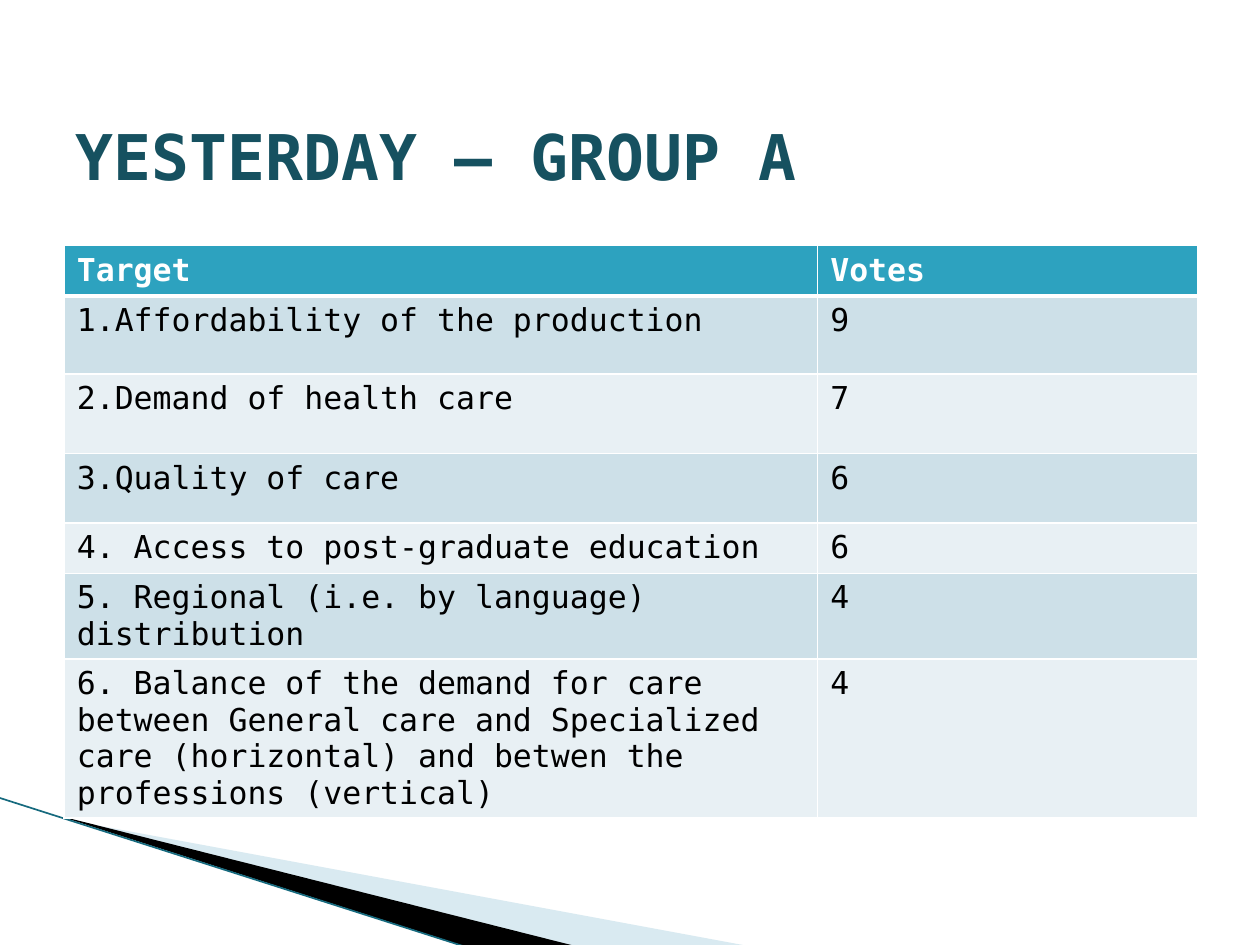
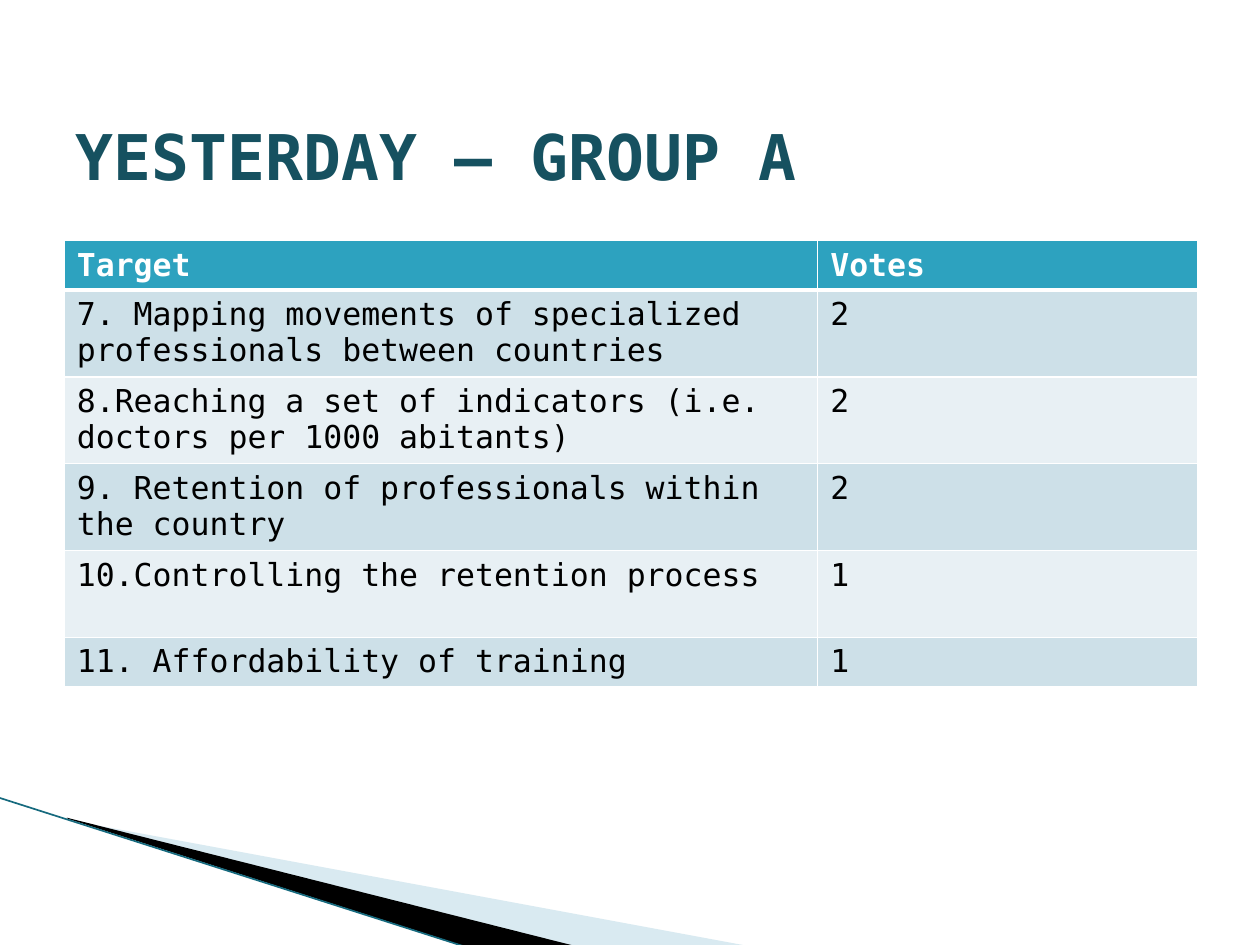
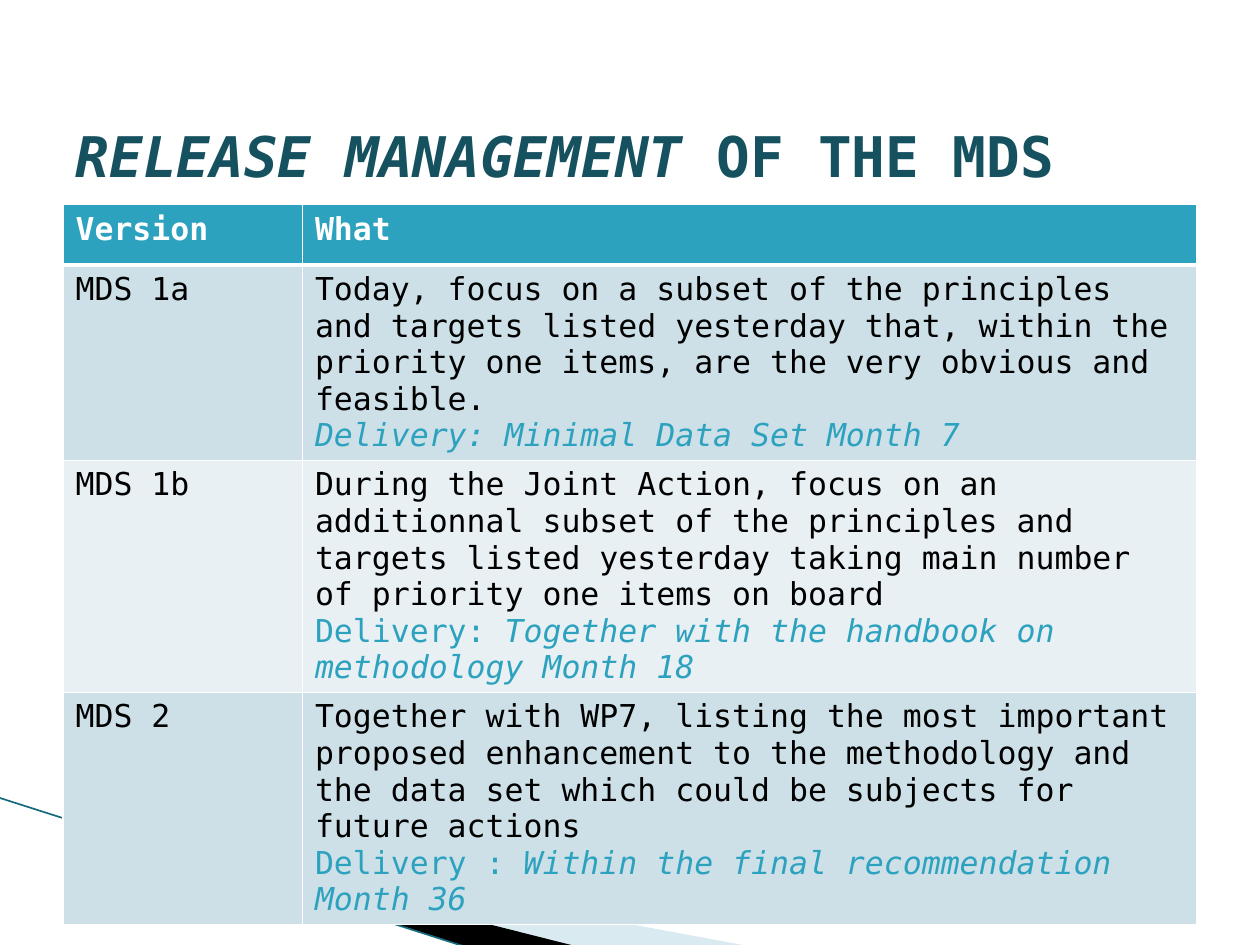
from lxml import etree
from pptx import Presentation
from pptx.dml.color import RGBColor
from pptx.enum.shapes import MSO_CONNECTOR
from pptx.enum.text import MSO_ANCHOR, MSO_AUTO_SIZE, PP_ALIGN
from pptx.oxml.ns import qn
from pptx.util import Pt

STRAIGHT = MSO_CONNECTOR.STRAIGHT
MIDDLE = MSO_ANCHOR.MIDDLE
TOP = MSO_ANCHOR.TOP
LEFT = PP_ALIGN.LEFT
NO_AUTOFIT = MSO_AUTO_SIZE.NONE

FONT = "DejaVu Sans Mono"
WHITE = RGBColor(0xFF, 0xFF, 0xFF)
BLACK = RGBColor(0x00, 0x00, 0x00)
TITLE_TEAL = RGBColor(0x16, 0x51, 0x60)
ACCENT = RGBColor(0x2D, 0xA2, 0xBF)
BAND_DARK = RGBColor(0xCD, 0xE0, 0xE8)
BAND_LIGHT = RGBColor(0xE8, 0xF0, 0xF4)
WEDGE_PALE = RGBColor(0xA0, 0xCB, 0xDC)
EDGE_TEAL = RGBColor(0x16, 0x6A, 0x7E)

DELIVERY = {"color": ACCENT}
DELIVERY_ITALIC = {"color": ACCENT, "italic": True}

VOTE_COLUMNS = [430.56, 217.44]
SLIDES = [
    {
        "title": [("YESTERDAY – GROUP A", {})],
        "title_size": 36,
        "position": (36.72, 140.4),
        "columns": VOTE_COLUMNS,
        "heights": [28.8, 44.64, 45.36, 39.6, 28.8, 28.8, 28.8],
        "header_anchor": MIDDLE,
        "rows": [
            ("Target", "Votes"),
            ("1.Affordability of the production", "9"),
            ("2.Demand of health care", "7"),
            ("3.Quality of care", "6"),
            ("4. Access to post-graduate education", "6"),
            ("5. Regional (i.e. by language) distribution", "4"),
            ("6. Balance of the demand for care between General care and "
             "Specialized care (horizontal) and betwen the professions (vertical)", "4"),
        ],
    },
    {
        "title": [("YESTERDAY – GROUP A", {})],
        "title_size": 36,
        "position": (36.72, 137.52),
        "columns": VOTE_COLUMNS,
        "heights": [28.08] + [49.68] * 4 + [28.08],
        "header_anchor": MIDDLE,
        "rows": [
            ("Target", "Votes"),
            ("7. Mapping movements of specialized professionals between countries", "2"),
            ("8.Reaching a set of indicators (i.e. doctors per 1000 abitants)", "2"),
            ("9. Retention of professionals within the country", "2"),
            ("10.Controlling the retention process", "1"),
            ("11. Affordability of training", "1"),
        ],
    },
    {
        "title": [("RELEASE MANAGEMENT", {"italic": True}), (" OF THE MDS", {})],
        "title_size": 32,
        "position": (36, 116.9),
        "columns": [136.8, 511.2],
        "heights": [34.56] + [83.52] * 3,
        "header_anchor": TOP,
        "rows": [
            ("Version", "What"),
            ("MDS 1a", [
                [("Today, focus on a subset of the principles and targets listed "
                  "yesterday that, within the priority one items, are the very "
                  "obvious and feasible.", {})],
                [("Delivery: Minimal Data Set Month 7", DELIVERY_ITALIC)],
            ]),
            ("MDS 1b", [
                [("During the Joint Action, focus on an additionnal subset of the "
                  "principles and targets listed yesterday taking main number of "
                  "priority one items on board", {})],
                [("Delivery: ", DELIVERY),
                 ("Together with the handbook on methodology Month 18", DELIVERY_ITALIC)],
            ]),
            ("MDS 2", [
                [("Together with WP7, listing the most important proposed "
                  "enhancement to the methodology and the data set which could be "
                  "subjects for future actions", {})],
                [("Delivery : ", DELIVERY),
                 ("Within the final recommendation Month 36", DELIVERY_ITALIC)],
            ]),
        ],
    },
]

WEDGES = [
    (WEDGE_PALE, 40, [(39.6, 468.7), (428.4, 540.7), (328.3, 540.7), (39.6, 468)]),
    (BLACK, 100, [(38.2, 467.3), (329, 540.7), (267.8, 541.4), (38.9, 468)]),
]


def write_text(text_frame, text, **text_format):
    paragraphs = [[(text, {})]] if isinstance(text, str) else text
    for index, runs in enumerate(paragraphs):
        paragraph = text_frame.add_paragraph() if index else text_frame.paragraphs[0]
        paragraph.alignment = LEFT
        for run_text, changes in runs:
            run_format = {**text_format, **changes}
            run = paragraph.add_run()
            run.text = run_text
            run.font.name = FONT
            run.font.size = Pt(run_format["size"])
            run.font.bold = run_format.get("bold", False)
            run.font.italic = run_format.get("italic", False)
            run.font.color.rgb = run_format["color"]


def add_border(cell, side, width):
    border = etree.SubElement(cell._tc.get_or_add_tcPr(), qn(f"a:ln{side}"), w=str(Pt(width)))
    fill = etree.SubElement(border, qn("a:solidFill"))
    etree.SubElement(fill, qn("a:srgbClr"), val=str(WHITE))


presentation = Presentation()
presentation.slide_width = Pt(720)
presentation.slide_height = Pt(540)
title_layout = presentation.slide_layouts[5]
slides = [presentation.slides.add_slide(title_layout) for _ in SLIDES]

decorations = []
for color, opacity, points in WEDGES:
    corners = [(Pt(x), Pt(y)) for x, y in points]
    builder = slides[0].shapes.build_freeform(*corners[0])
    builder.add_line_segments(corners[1:])
    wedge = builder.convert_to_shape()
    wedge.shadow.inherit = False
    wedge.fill.solid()
    wedge.fill.fore_color.rgb = color
    wedge.line.fill.background()
    if opacity < 100:
        color_element = wedge.element.spPr.find(qn("a:solidFill"))[0]
        etree.SubElement(color_element, qn("a:alpha"), val=str(opacity * 1000))
    decorations.append(wedge)

edge = slides[0].shapes.add_connector(STRAIGHT, Pt(-0.7), Pt(455.8), Pt(267.1), Pt(541.4))
edge.line.color.rgb = EDGE_TEAL
edge.line.width = Pt(0.95)
etree.SubElement(edge.element.spPr, qn("a:effectLst"))
decorations.append(edge)

for decoration in decorations:
    title_layout.shapes.element.append(decoration.element)

for slide, content in zip(slides, SLIDES):
    title = slide.shapes.title
    title.left, title.top, title.width, title.height = Pt(36), Pt(65.5), Pt(648), Pt(46)
    title.text_frame.word_wrap = True
    title.text_frame.auto_size = NO_AUTOFIT
    title.text_frame.vertical_anchor = MIDDLE
    write_text(title.text_frame, [content["title"]],
               size=content["title_size"], bold=True, color=TITLE_TEAL)

    rows, columns, heights = content["rows"], content["columns"], content["heights"]
    left, top = content["position"]
    table = slide.shapes.add_table(len(rows), len(columns), Pt(left), Pt(top),
                                   Pt(sum(columns)), Pt(sum(heights))).table
    table.horz_banding = False
    for column, width in zip(table.columns, columns):
        column.width = Pt(width)
    for row_index, (row, height) in enumerate(zip(rows, heights)):
        table.rows[row_index].height = Pt(height)
        header = row_index == 0
        for column_index, text in enumerate(row):
            cell = table.cell(row_index, column_index)
            cell.vertical_anchor = content["header_anchor"] if header else TOP
            for side in "LRTB":
                thick = (row_index, side) in [(0, "B"), (1, "T")]
                add_border(cell, side, 3 if thick else 1)
            cell.fill.solid()
            band = BAND_DARK if row_index % 2 else BAND_LIGHT
            cell.fill.fore_color.rgb = ACCENT if header else band
            write_text(cell.text_frame, text, size=18, bold=header,
                       color=WHITE if header else BLACK)

presentation.save("out.pptx")
